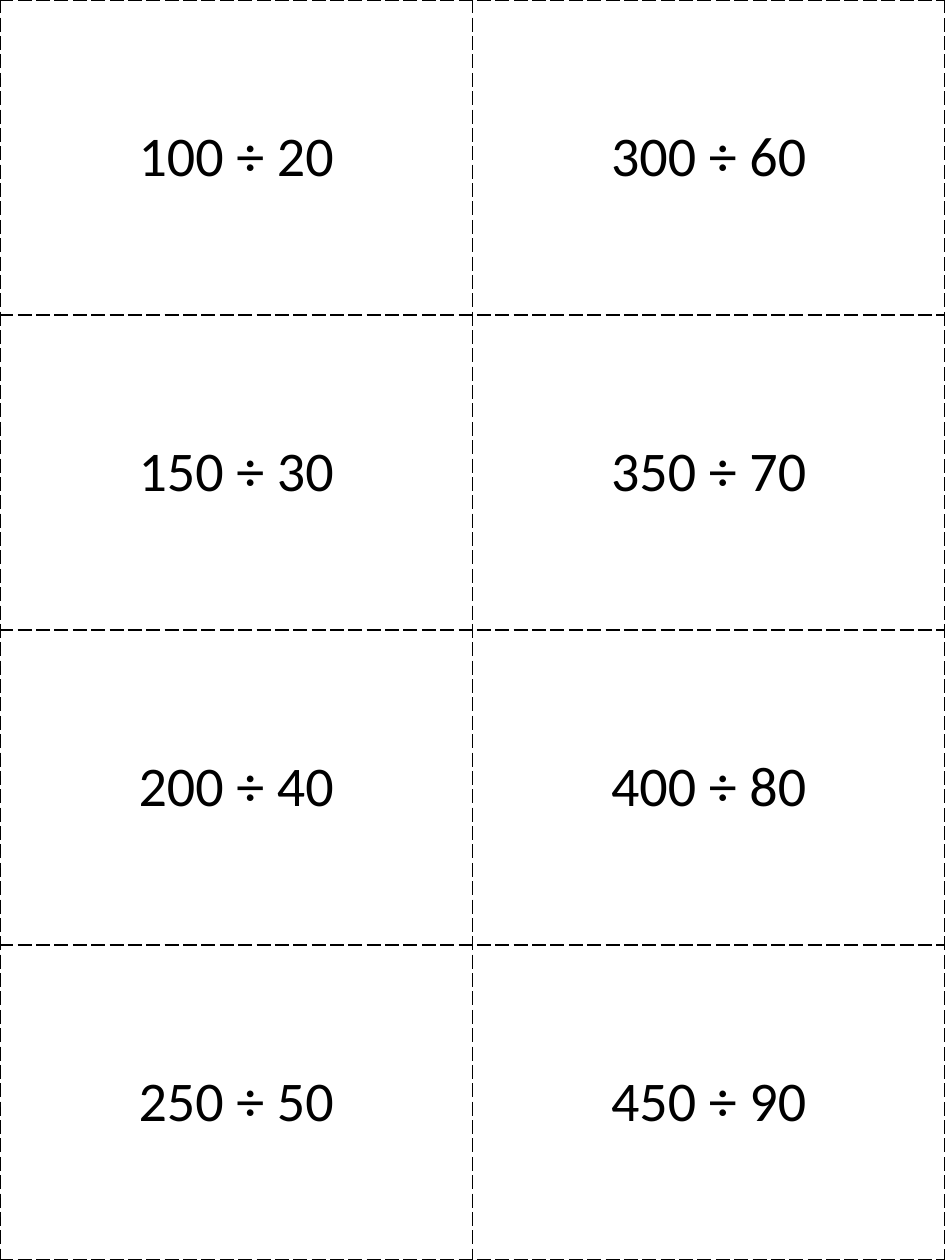
from lxml import etree
from pptx import Presentation
from pptx.dml.color import RGBColor
from pptx.enum.text import MSO_ANCHOR, PP_ALIGN
from pptx.oxml.ns import qn
from pptx.util import Inches, Pt

MIDDLE = MSO_ANCHOR.MIDDLE
CENTER = PP_ALIGN.CENTER
BLACK = RGBColor(0, 0, 0)
WIDTH, HEIGHT = 7.5, 10
ROWS, COLUMNS = 4, 2


class CardSheet:
    font_name = "Calibri"
    font_size = Pt(32)
    color = BLACK
    border_width = Pt(1)
    border_dash = "lgDash"

    def __init__(self, slide):
        self.slide = slide

    def table(self, left, top, width, height, rows):
        frame = self.slide.shapes.add_table(
            len(rows), len(rows[0]),
            Inches(left), Inches(top), Inches(width), Inches(height))
        table = frame.table
        table.first_row = False
        table.horz_banding = False
        for row, texts in enumerate(rows):
            for column, text in enumerate(texts):
                self.card(table.cell(row, column), text)

    def card(self, cell, text):
        cell.text_frame.text = text
        cell.vertical_anchor = MIDDLE
        cell.fill.background()
        para = cell.text_frame.paragraphs[0]
        para.alignment = CENTER
        font = para.runs[0].font
        font.name = self.font_name
        font.size = self.font_size
        font.color.rgb = self.color
        self.borders(cell)

    def borders(self, cell):
        properties = cell._tc.get_or_add_tcPr()
        for position, side in enumerate(("lnL", "lnR", "lnT", "lnB")):
            line = etree.Element(qn(f"a:{side}"), w=str(self.border_width))
            fill = etree.SubElement(line, qn("a:solidFill"))
            etree.SubElement(fill, qn("a:srgbClr"), val=str(self.color))
            etree.SubElement(line, qn("a:prstDash"), val=self.border_dash)
            properties.insert(position, line)


def division(index):
    divisor = 20 + 10 * index
    return f"{5 * divisor} ÷ {divisor}"


def main():
    deck = Presentation()
    deck.slide_width = Inches(WIDTH)
    deck.slide_height = Inches(HEIGHT)
    sheet = CardSheet(deck.slides.add_slide(deck.slide_layouts[6]))
    cards = [[division(column * ROWS + row) for column in range(COLUMNS)]
             for row in range(ROWS)]
    sheet.table(0, 0, WIDTH, HEIGHT, cards)
    deck.save("out.pptx")


if __name__ == "__main__":
    main()
